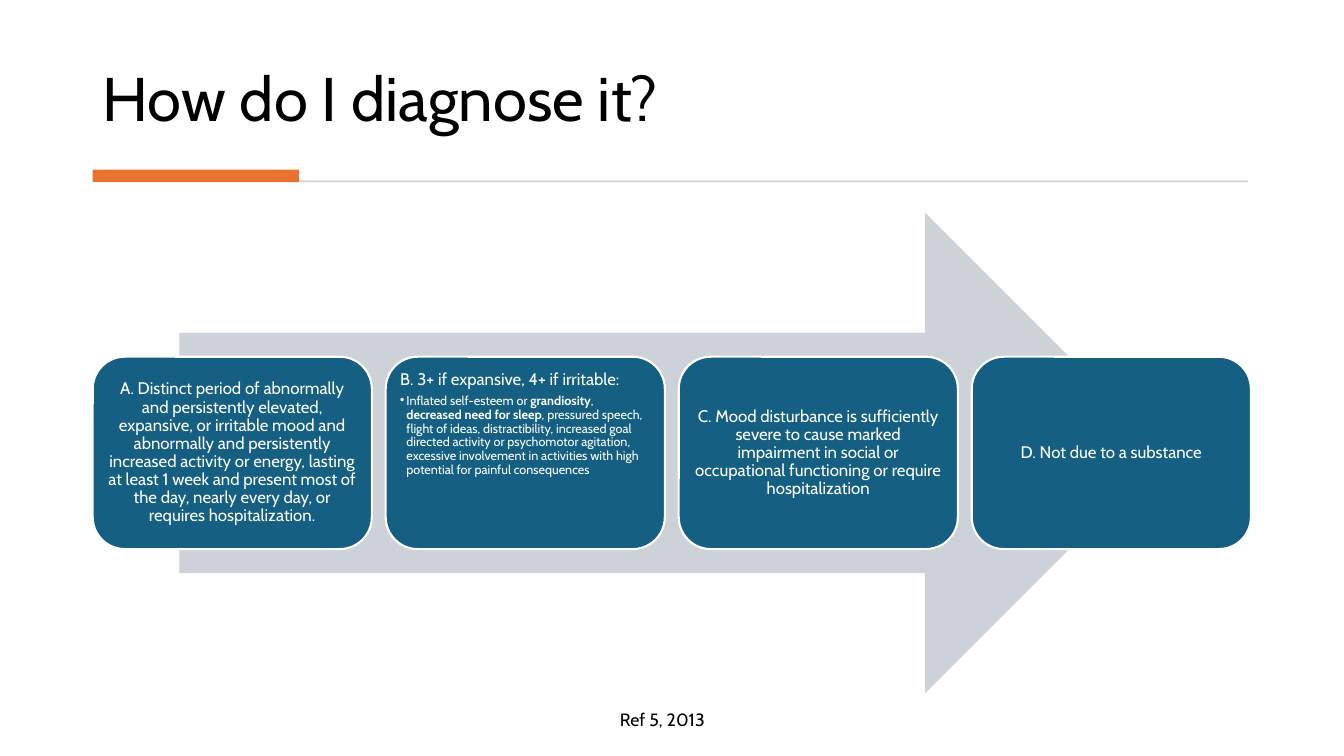
from dataclasses import dataclass

from lxml.etree import SubElement
from pptx import Presentation
from pptx.dml.color import RGBColor
from pptx.enum.shapes import MSO_SHAPE
from pptx.enum.text import MSO_ANCHOR, PP_ALIGN
from pptx.oxml.ns import qn
from pptx.shapes.autoshape import Shape
from pptx.slide import Slide
from pptx.text.text import TextFrame, _Paragraph
from pptx.util import Pt


@dataclass(frozen=True)
class Theme:
    face: str = "Cabin"
    ink: str = "000000"
    white: str = "FFFFFF"
    rule: str = "D5D5D5"
    accent: str = "E97132"
    arrow: str = "CCD2D8"
    card: str = "156082"
    title: float = 44
    body: float = 12
    detail: float = 9
    source: float = 12.7


@dataclass(frozen=True)
class Box:
    left: float
    top: float
    width: float
    height: float

    def points(self) -> tuple[Pt, Pt, Pt, Pt]:
        """Return the place and size as lengths."""
        return Pt(self.left), Pt(self.top), Pt(self.width), Pt(self.height)


@dataclass(frozen=True)
class Run:
    text: str
    bold: bool = False


@dataclass(frozen=True)
class Card:
    head: str
    detail: tuple[Run, ...] = ()


THEME = Theme()
PITCH = 209.3
FIRST = Box(66.24, 254.8, 199.4, 137.4)
CARDS = (
    Card(
        "A. Distinct period of abnormally and persistently elevated, expansive, "
        "or irritable mood and abnormally and persistently increased activity or "
        "energy, lasting at least 1 week and present most of the day, nearly "
        "every day, or requires hospitalization."
    ),
    Card(
        "B. 3+ if expansive, 4+ if irritable:",
        (
            Run("Inflated self-esteem or "),
            Run("grandiosity", True),
            Run(", "),
            Run("decreased need for sleep", True),
            Run(
                ", pressured speech, flight of ideas, distractibility, increased "
                "goal directed activity or psychomotor agitation, excessive "
                "involvement in activities with high potential for painful "
                "consequences"
            ),
        ),
    ),
    Card(
        "C. Mood disturbance is sufficiently severe to cause marked impairment "
        "in social or occupational functioning or require hospitalization"
    ),
    Card("D. Not due to a substance"),
)


def add_form(slide: Slide, kind: MSO_SHAPE, box: Box, fill: str) -> Shape:
    """Draw a flat filled shape without an outline."""
    form = slide.shapes.add_shape(kind, *box.points())
    form.shadow.inherit = False
    form.fill.solid()
    form.fill.fore_color.rgb = RGBColor.from_string(fill)
    form.line.fill.background()
    return form


def set_inset(frame: TextFrame, inset: float) -> None:
    """Give all four sides of a text frame the same inset."""
    frame.margin_left = frame.margin_right = Pt(inset)
    frame.margin_top = frame.margin_bottom = Pt(inset)


def style(para: _Paragraph, size: float, color: str) -> None:
    """Set the font of a whole paragraph."""
    para.font.name = THEME.face
    para.font.size = Pt(size)
    para.font.color.rgb = RGBColor.from_string(color)


def add_bullet(para: _Paragraph, indent: float) -> None:
    """Give a paragraph a hanging bullet."""
    props = para._p.get_or_add_pPr()
    props.set("marL", str(Pt(indent)))
    props.set("indent", str(-Pt(indent)))
    SubElement(props, qn("a:buChar"), char="•")


def add_card(slide: Slide, card: Card, box: Box) -> None:
    """Draw one criterion card with its text."""
    form = add_form(slide, MSO_SHAPE.ROUNDED_RECTANGLE, box, THEME.card)
    form.line.color.rgb = RGBColor.from_string(THEME.white)
    form.line.width = Pt(1.5)
    frame = form.text_frame
    frame.word_wrap = True
    set_inset(frame, 3.6)
    frame.vertical_anchor = MSO_ANCHOR.TOP if card.detail else MSO_ANCHOR.MIDDLE
    head = frame.paragraphs[0]
    head.text = card.head
    head.alignment = PP_ALIGN.LEFT if card.detail else PP_ALIGN.CENTER
    head.line_spacing = 0.9
    head.space_after = Pt(4.2)
    style(head, THEME.body, THEME.white)
    if card.detail:
        para = frame.add_paragraph()
        para.alignment = PP_ALIGN.LEFT
        para.line_spacing = 0.9
        para.space_after = Pt(1.35)
        add_bullet(para, 4.5)
        style(para, THEME.detail, THEME.white)
        for part in card.detail:
            run = para.add_run()
            run.text = part.text
            if part.bold:
                run.font.bold = True


def add_label(slide: Slide, text: str, box: Box, size: float) -> TextFrame:
    """Add a one-line text box and return its frame."""
    frame = slide.shapes.add_textbox(*box.points()).text_frame
    para = frame.paragraphs[0]
    para.text = text
    style(para, size, THEME.ink)
    return frame


def main() -> None:
    """Build the slide and save it."""
    deck = Presentation()
    deck.slide_width, deck.slide_height = Pt(960), Pt(540)
    slide = deck.slides.add_slide(deck.slide_layouts[6])

    title = add_label(
        slide, "How do I diagnose it?", Box(66.24, 20.16, 827.3, 79.9), THEME.title
    )
    title.word_wrap = True
    title.vertical_anchor = MSO_ANCHOR.BOTTOM
    title.paragraphs[0].line_spacing = 0.9

    rect = MSO_SHAPE.RECTANGLE
    add_form(slide, rect, Box(68.4, 128.8, 823, 1.44), THEME.rule)
    add_form(slide, rect, Box(66.24, 121.2, 147.4, 8.64), THEME.accent)

    source = add_label(
        slide, "Ref 5, 2013", Box(439.9, 503.3, 74.9, 20.9), THEME.source
    )
    source.word_wrap = False
    source.vertical_anchor = MSO_ANCHOR.MIDDLE
    set_inset(source, 2.88)

    add_form(slide, MSO_SHAPE.RIGHT_ARROW, Box(128.2, 151.9, 704.2, 343.4), THEME.arrow)
    for step, card in enumerate(CARDS):
        left = FIRST.left + step * PITCH
        add_card(slide, card, Box(left, FIRST.top, FIRST.width, FIRST.height))

    deck.save("out.pptx")


if __name__ == "__main__":
    main()
